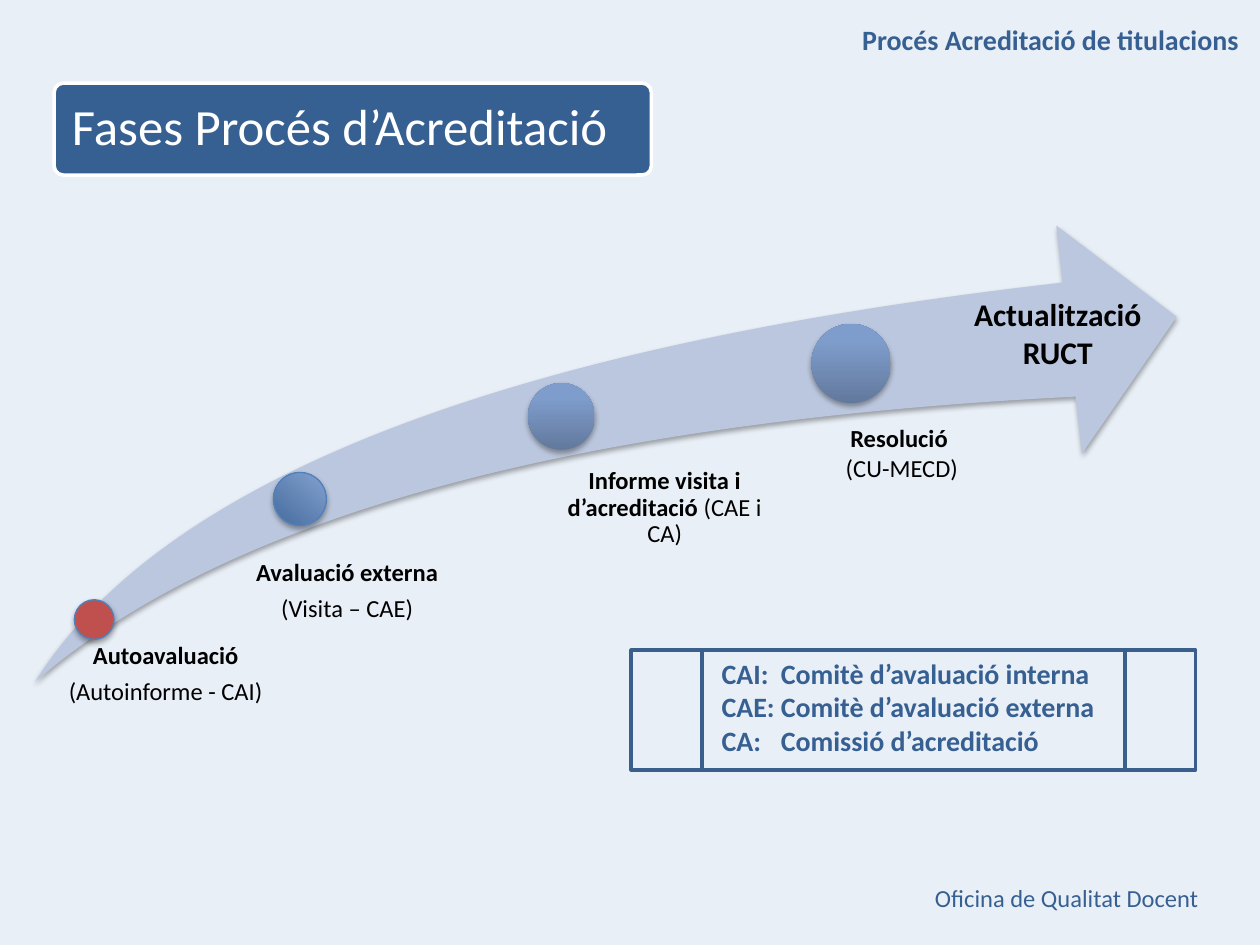
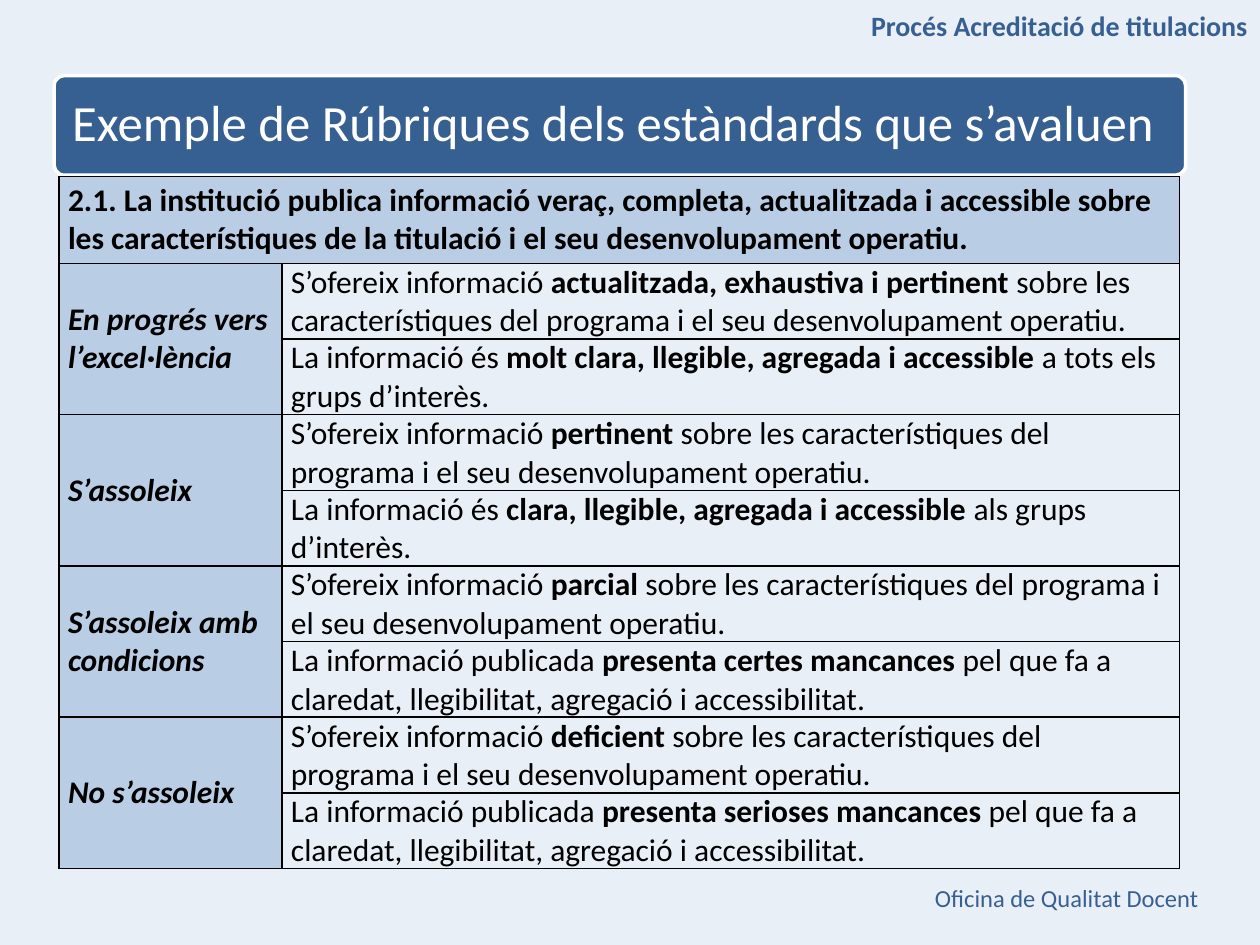
from dataclasses import dataclass

from lxml import etree
from pptx import Presentation
from pptx.dml.color import RGBColor
from pptx.enum.shapes import MSO_SHAPE as Preset
from pptx.enum.text import MSO_ANCHOR as Anchor, PP_ALIGN as Align
from pptx.oxml import parse_xml
from pptx.oxml.ns import nsdecls, qn
from pptx.util import Inches, Pt


@dataclass(frozen=True)
class Theme:
    font: str = "Calibri"
    background: str = "E9EFF7"
    navy: str = "376092"
    frame: str = "3A5F8C"
    swoosh: str = "BBC7DE"
    sky: str = "7F9DCC"
    slate: str = "62799D"
    outline: str = "4F81BD"
    red: str = "C0504D"
    cell: str = "B9CDE5"
    black: str = "000000"
    white: str = "FFFFFF"
    title_size: float = 29
    table_size: float = 18
    heading_size: float = 16
    label_size: float = 14


THEME = Theme()
COLUMNS, ROWS = 100, 75  # layout grid covering the whole slide
UNIT = Inches(10) // COLUMNS
LABEL_GAP = 5  # points between the lines of a phase label

ABOUT = "sobre les característiques del programa i el seu desenvolupament operatiu."
CLARITY = "pel que fa a claredat, llegibilitat, agregació i accessibilitat."
STANDARD = ("2.1. La institució publica informació veraç, completa, actualitzada i "
            "accessible sobre les característiques de la titulació i el seu "
            "desenvolupament operatiu.")
# Level, quality of the content, clarity of the publication (** marks bold)
RUBRIC = [
    ("En progrés vers l’excel·lència", "actualitzada, exhaustiva i pertinent",
     "és **molt clara, llegible, agregada i accessible **a tots els grups d’interès."),
    ("S’assoleix", "pertinent",
     "és **clara, llegible, agregada i accessible **als grups d’interès."),
    ("S’assoleix amb condicions", "parcial",
     f"publicada **presenta certes mancances **{CLARITY}"),
    ("No s’assoleix", "deficient",
     f"publicada **presenta serioses mancances **{CLARITY}"),
]


def rgb(color):
    return RGBColor.from_string(color)


def grid(*cells):
    return [round(cell * UNIT) for cell in cells]


# Text
def write(frame, lines, size, color=THEME.black, align=Align.LEFT, bold=False,
          italic=False, anchor=Anchor.TOP, insets=None, spacing=None, gap=None):
    """Fill a text frame; ** switches bold on and off inside a line."""
    frame.word_wrap = True
    frame.vertical_anchor = anchor
    if insets:
        (frame.margin_left, frame.margin_top,
         frame.margin_right, frame.margin_bottom) = grid(*insets)
    for index, line in enumerate(lines):
        paragraph = frame.add_paragraph() if index else frame.paragraphs[0]
        paragraph.alignment = align
        if spacing:
            paragraph.line_spacing = spacing
        if gap:
            paragraph.space_after = Pt(gap)
        font = paragraph.font
        font.name, font.size, font.bold, font.italic = THEME.font, Pt(size), bold, italic
        font.color.rgb = rgb(color)
        for part, text in enumerate(line.split("**")):
            if text:
                run = paragraph.add_run()
                run.text = text
                if part % 2:
                    run.font.bold = True


def add_text(slide, place, lines, size, **style):
    box = slide.shapes.add_textbox(*grid(*place))
    write(box.text_frame, lines, size, **style)
    return box


# Shapes
def add_shape(slide, preset, place, fill=None, line=None, width=0.75):
    shape = slide.shapes.add_shape(preset, *grid(*place))
    shape.shadow.inherit = False
    if fill:
        shape.fill.solid()
        shape.fill.fore_color.rgb = rgb(fill)
    else:
        shape.fill.background()
    if line:
        shape.line.color.rgb = rgb(line)
        shape.line.width = Pt(width)
    else:
        shape.line.fill.background()
    return shape


def cast_shadow(shape):
    effects = shape._element.spPr.find(qn("a:effectLst"))
    effects.append(parse_xml(
        f'<a:outerShdw {nsdecls("a")} blurRad="40000" dist="23000" dir="5400000" '
        'rotWithShape="0"><a:srgbClr val="000000"><a:alpha val="35000"/>'
        '</a:srgbClr></a:outerShdw>'))


def shade(shape, dark, angle):
    shape.fill.gradient()
    shape.fill.gradient_angle = angle
    for stop, color, position in zip(shape.fill.gradient_stops, (dark, THEME.sky), (0, 0.8)):
        stop.color.rgb = rgb(color)
        stop.position = position


def add_milestone(slide, left, top, size, fill=THEME.sky, line=None):
    ball = add_shape(slide, Preset.OVAL, (left, top, size, size), fill, line)
    cast_shadow(ball)
    return ball


def add_phase_label(slide, place, lines, inset):
    add_text(slide, place, lines, THEME.label_size, align=Align.CENTER,
             insets=(inset, 0, 0, 0), spacing=0.9, gap=LABEL_GAP)


# Table
def style_cell(cell, text, fill=None, **style):
    write(cell.text_frame, [text], THEME.table_size, **style)
    cell.vertical_anchor = Anchor.MIDDLE if fill else Anchor.TOP
    cell.margin_left, cell.margin_top, cell.margin_right, cell.margin_bottom = grid(
        0.7, 0, 0.7, 0)


def paint_cell(cell, fill):
    if fill:
        cell.fill.solid()
        cell.fill.fore_color.rgb = rgb(fill)
    else:
        cell.fill.background()
    properties = cell._tc.get_or_add_tcPr()
    for index, side in enumerate(("lnL", "lnR", "lnT", "lnB")):
        border = etree.Element(qn(f"a:{side}"), w=str(Pt(1)))
        solid = etree.SubElement(border, qn("a:solidFill"))
        etree.SubElement(solid, qn("a:srgbClr"), val=THEME.black)
        properties.insert(index, border)


def add_rubric(slide, place, widths, header_height, row_height):
    row_count = 1 + 2 * len(RUBRIC)
    table = slide.shapes.add_table(row_count, 2, *grid(*place)).table
    table.first_row = table.horz_banding = False
    for column, width in zip(table.columns, grid(*widths)):
        column.width = width
    for index, row in enumerate(table.rows):
        row.height = grid(row_height if index else header_height)[0]
        for column in range(2):
            filled = index == 0 or column == 0
            paint_cell(table.cell(index, column), THEME.cell if filled else None)

    table.cell(0, 0).merge(table.cell(0, 1))
    style_cell(table.cell(0, 0), STANDARD, THEME.cell, bold=True)
    for index, (level, quality, publication) in enumerate(RUBRIC):
        first = 1 + 2 * index
        table.cell(first, 0).merge(table.cell(first + 1, 0))
        style_cell(table.cell(first, 0), level, THEME.cell, bold=True, italic=True)
        style_cell(table.cell(first, 1), f"S’ofereix informació **{quality} **{ABOUT}")
        style_cell(table.cell(first + 1, 1), f"La informació {publication}")


# Parts shared by the slides
def start_slide(deck, title, band, heading_at):
    slide = deck.slides.add_slide(deck.slide_layouts[6])
    slide.background.fill.solid()
    slide.background.fill.fore_color.rgb = rgb(THEME.background)
    add_text(slide, (4, 69.6, 92.1, 3.4), ["Oficina de Qualitat Docent"],
             THEME.label_size, color=THEME.navy, align=Align.RIGHT)
    add_text(slide, (*heading_at, 92.1, 3.7), ["Procés Acreditació de titulacions"],
             THEME.heading_size, color=THEME.navy, align=Align.RIGHT, bold=True)
    title_band = add_shape(slide, Preset.ROUNDED_RECTANGLE, band, THEME.navy, THEME.white, 2)
    title_band.adjustments[0] = 0.1
    write(title_band.text_frame, [title], THEME.title_size, color=THEME.white,
          anchor=Anchor.MIDDLE, insets=(1.2,) * 4, spacing=0.9)
    return slide


def build_phases(deck):
    slide = start_slide(deck, "Fases Procés d’Acreditació", (4.3, 6.6, 47.4, 7.3), (7.2, 1.3))

    # Rising arrow
    swoosh = add_shape(slide, Preset.SWOOSH_ARROW, (2.8, 17.9, 90.6, 36.2), THEME.swoosh)
    swoosh.adjustments[0] = swoosh.adjustments[1] = 0.25
    cast_shadow(swoosh)

    # Milestones along the arrow
    add_milestone(slide, 5.9, 47.6, 3.15, THEME.red, THEME.outline)
    external = add_milestone(slide, 21.7, 37.5, 4.2, line=THEME.outline)
    external.rotation = 310.3
    shade(external, THEME.navy, 0)
    for left, top, size in ((41.9, 30.4, 5.3), (64.4, 25.7, 6.3)):
        shade(add_milestone(slide, left, top, size), THEME.slate, 90)

    # Phase labels
    add_phase_label(slide, (3.5, 51.1, 18.5, 7.3),
                    ["**Autoavaluació", "(Autoinforme - CAI)"], 0.8)
    add_phase_label(slide, (16.9, 44.5, 19.9, 7.1),
                    ["**Avaluació externa", "(Visita – CAE)"], 1.4)
    add_phase_label(slide, (41.9, 37.2, 19.7, 6.3),
                    ["**Informe visita i d’acreditació** (CAE i CA)"], 2)
    add_text(slide, (61.9, 33.1, 18.9, 5.7), ["**Resolució", " (CU-MECD)"],
             THEME.label_size, align=Align.CENTER)
    add_text(slide, (75.7, 22.9, 16.5, 7.1), ["Actualització RUCT"],
             THEME.table_size, align=Align.CENTER, bold=True)

    # Key to the abbreviations
    add_shape(slide, Preset.FLOWCHART_PREDEFINED_PROCESS, (50.1, 51.6, 44.8, 9.5),
              line=THEME.frame, width=2)
    key = add_text(slide, (56.3, 51.6, 36, 11.8),
                   ["CAI:\tComitè d’avaluació interna", "CAE:\tComitè d’avaluació externa",
                    "CA:\tComissió d’acreditació"],
                   THEME.heading_size, color=THEME.navy, bold=True)
    hang = grid(4.7)[0]
    for paragraph in key.text_frame.paragraphs:
        properties = paragraph._p.get_or_add_pPr()
        properties.set("marL", str(hang))
        properties.set("indent", str(-hang))


def build_rubric(deck):
    slide = start_slide(deck, "Exemple de Rúbriques dels estàndards que s’avaluen",
                        (4.3, 6, 89.8, 7.9), (7.9, 0.2))
    add_rubric(slide, (4.7, 14, 88.9, 54.9), (17.7, 71.2), 6.9, 6)


def main():
    deck = Presentation()
    deck.slide_width, deck.slide_height = COLUMNS * UNIT, ROWS * UNIT
    build_phases(deck)
    build_rubric(deck)
    deck.save("out.pptx")


if __name__ == "__main__":
    main()
